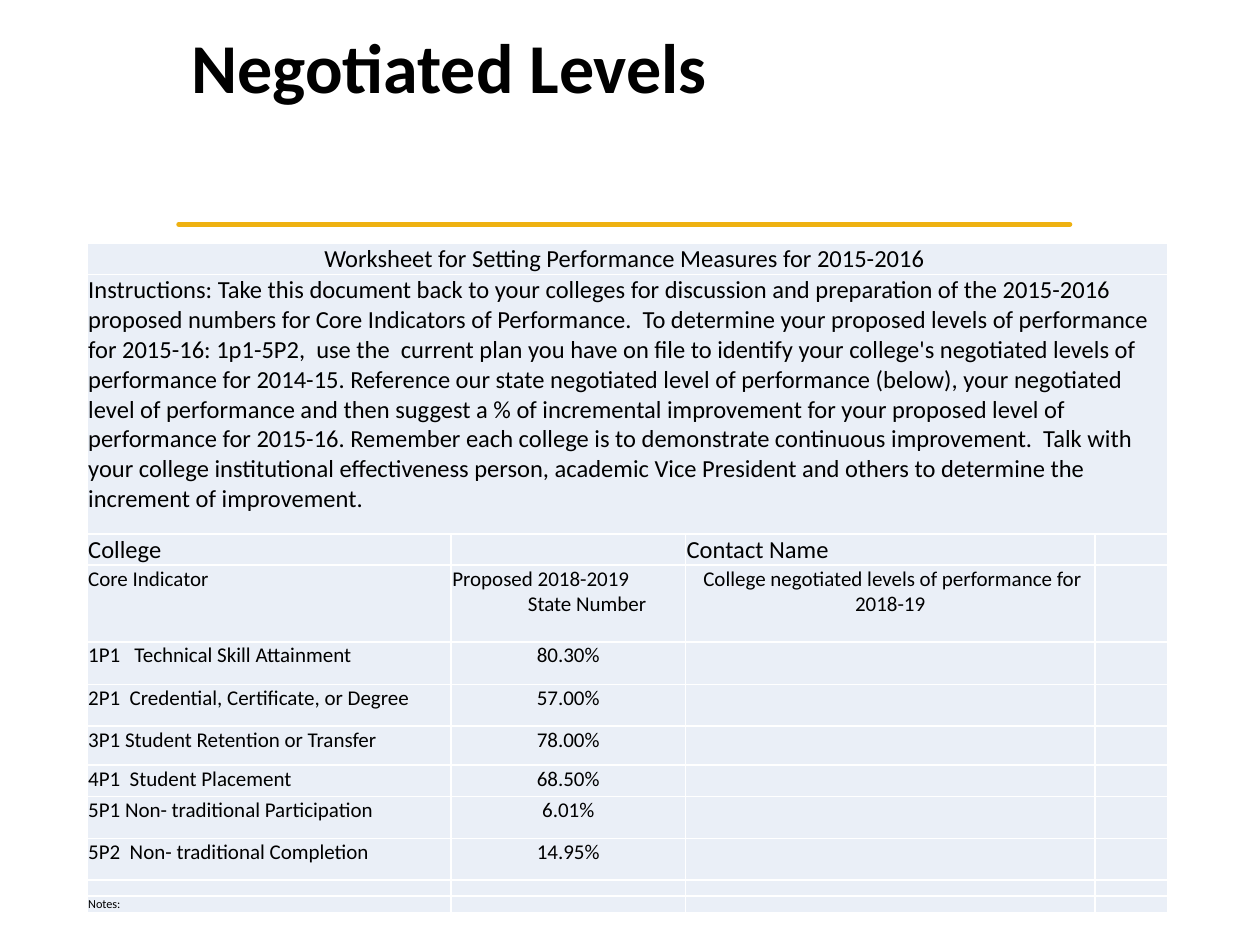
from lxml.etree import SubElement as Sub
from pptx import Presentation
from pptx.dml.color import RGBColor
from pptx.enum.shapes import MSO_CONNECTOR as Link
from pptx.enum.text import MSO_ANCHOR as Anchor, MSO_AUTO_SIZE as Auto, PP_ALIGN as Align
from pptx.oxml.ns import qn
from pptx.util import Inches, Pt

BLACK = RGBColor(0, 0, 0)
WHITE = RGBColor(255, 255, 255)
PALE = RGBColor(0xEA, 0xEF, 0xF7)
GOLD = RGBColor(0xEE, 0xB1, 0x11)
FACE = "Calibri"
COLS = [2.89, 1.86, 3.25, 0.58]
ROWS = [0.24, 2.06, 0.24, 0.61, 0.34, 0.33, 0.31, 0.25, 0.33, 0.33, 0.13, 0.13]
SIZES = [14] * 3 + [12] * 7 + [7] * 2
HEAD = "Worksheet for Setting Performance Measures for 2015-2016 "
GUIDE = (
    "Instructions: Take this document back to your colleges for discussion and preparation "
    "of the 2015-2016 proposed numbers for Core Indicators of Performance.  To determine your "
    "proposed levels of performance for 2015-16: 1p1-5P2,  use the  current plan you have on "
    "file to identify your college's negotiated levels of performance for 2014-15. Reference "
    "our state negotiated level of performance (below), your negotiated level of performance "
    "and then suggest a % of incremental improvement for your proposed level of performance "
    "for 2015-16. Remember each college is to demonstrate continuous improvement.  Talk with "
    "your college institutional effectiveness person, academic Vice President and others to "
    "determine the increment of improvement."
)
GOALS = [
    ("1P1   Technical Skill Attainment", "80.30%"),
    ("2P1  Credential, Certificate, or Degree", "57.00%"),
    ("3P1 Student Retention or Transfer", "78.00%"),
    ("4P1  Student Placement", "68.50%"),
    ("5P1 Non- traditional Participation", "6.01%"),
    ("5P2  Non- traditional Completion", "14.95%"),
]
DATA = [
    (HEAD,),
    (GUIDE,),
    ("College", "", "Contact Name"),
    ("Core Indicator", "Proposed 2018-2019\nState Number",
     " College negotiated levels of performance for 2018-19"),
    *GOALS,
    (),
    ("Notes:",),
]


def style(item, **form):
    """Set each format value on an item."""
    for name, value in form.items():
        setattr(item, name, value)


def ink(font, size, bold=False):
    """Give a font its face, size and colour."""
    style(font, name=FACE, size=Pt(size), bold=bold)
    font.color.rgb = BLACK


def add_title(slide, text):
    """Place the title at the top of its placeholder."""
    title = slide.shapes.title
    style(title, left=Inches(1.42), top=Inches(0.18), width=Inches(8.05), height=Inches(1.45))
    frame = title.text_frame
    style(frame, text=text, word_wrap=True, auto_size=Auto.NONE,
          vertical_anchor=Anchor.TOP, margin_top=Inches(0.08))
    style(frame.paragraphs[0], alignment=Align.LEFT, line_spacing=0.9)
    ink(frame.paragraphs[0].runs[0].font, 40, True)


def add_rule(slide, left, right, top):
    """Draw the gold rule under the title."""
    rule = slide.shapes.add_connector(Link.STRAIGHT, *map(Inches, (left, top, right, top)))
    rule.line.color.rgb = GOLD
    rule.line.width = Pt(3)
    props = rule._element.spPr
    props.find(qn("a:ln")).set("cap", "rnd")
    Sub(props, qn("a:effectLst"))


def add_edges(cell):
    """Line a cell with thin white borders."""
    props = cell._tc.get_or_add_tcPr()
    for spot, side in enumerate("LRTB"):
        edge = Sub(props, qn(f"a:ln{side}"), w=str(Pt(1)))
        Sub(Sub(edge, qn("a:solidFill")), qn("a:srgbClr"), val=str(WHITE))
        props.insert(spot, edge)


def fill_cell(cell, text, size, align):
    """Write and format one cell."""
    gap = Inches(0.01)
    style(cell, text=text, margin_left=gap, margin_right=gap, margin_top=gap,
          margin_bottom=0, vertical_anchor=Anchor.TOP)
    cell.fill.solid()
    cell.fill.fore_color.rgb = PALE
    add_edges(cell)
    for para in cell.text_frame.paragraphs:
        para.alignment = align
        for run in para.runs:
            ink(run.font, size)
        if not text:
            Sub(para._p, qn("a:endParaRPr"), sz=str(size * 100))


def add_sheet(slide):
    """Build the worksheet table."""
    area = map(Inches, (0.69, 1.93, sum(COLS), sum(ROWS)))
    table = slide.shapes.add_table(len(ROWS), len(COLS), *area).table
    style(table, first_row=False, horz_banding=False)
    for col, width in zip(table.columns, COLS):
        col.width = Inches(width)
    for r, (high, size, words) in enumerate(zip(ROWS, SIZES, DATA)):
        table.rows[r].height = Inches(high)
        for c in range(len(COLS)):
            text = words[c] if c < len(words) else ""
            mid = r == 0 or (r > 2 and c > 0)
            fill_cell(table.cell(r, c), text, size, Align.CENTER if mid else Align.LEFT)
    for r in (0, 1):
        table.cell(r, 0).merge(table.cell(r, len(COLS) - 1))
    first, last = table.cell(3, 1).text_frame.paragraphs
    first.alignment = Align.LEFT
    last._p.get_or_add_pPr().set("marL", str(Inches(0.3)))


def main():
    """Build and save the slide."""
    deck = Presentation()
    style(deck, slide_width=Inches(10), slide_height=Inches(7.5))
    slide = deck.slides.add_slide(deck.slide_layouts[5])
    add_rule(slide, 1.42, 8.49, 1.78)
    add_sheet(slide)
    add_title(slide, "Negotiated Levels")
    deck.save("out.pptx")


if __name__ == "__main__":
    main()
